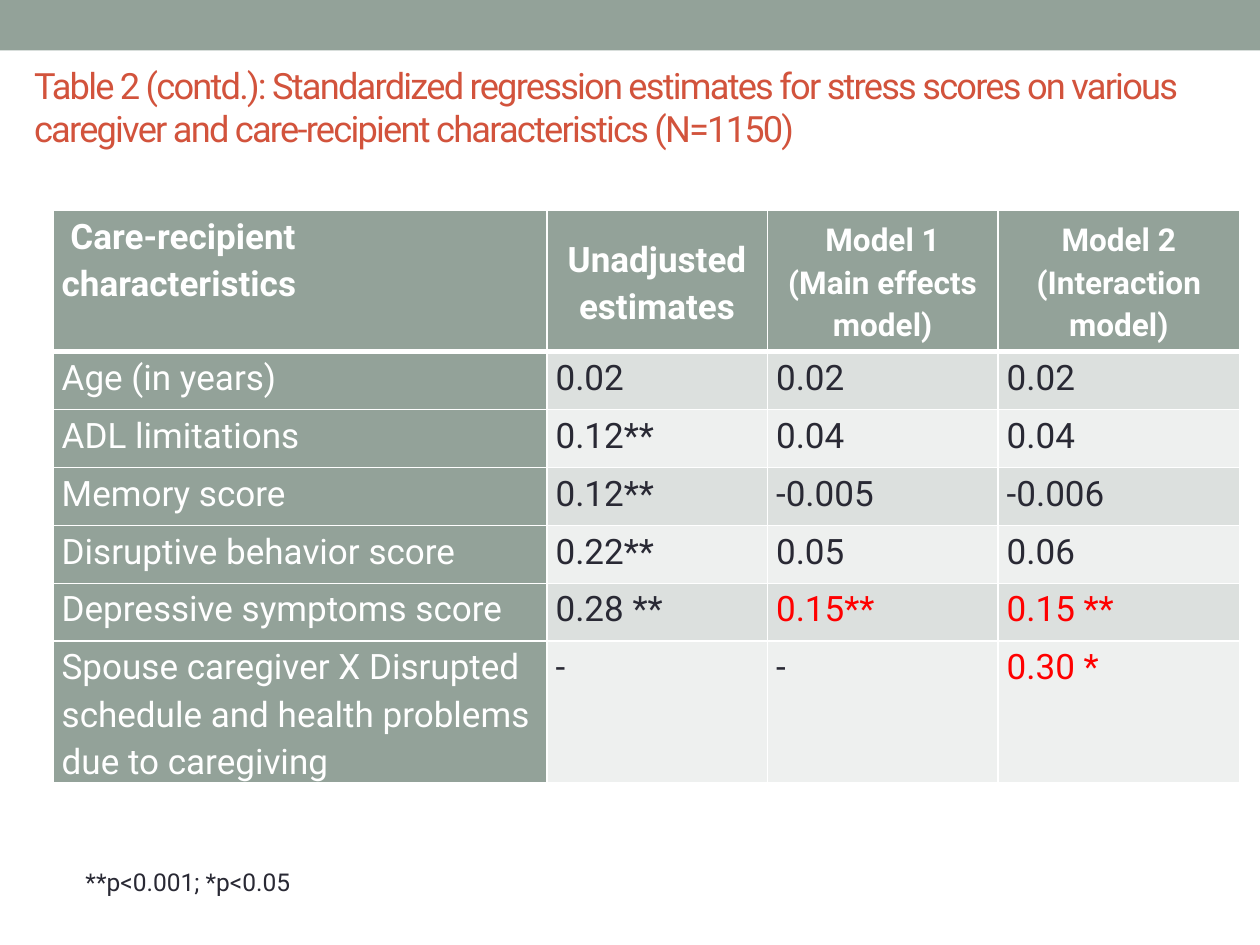
import pptx
import pptx.dml.color
import pptx.enum.shapes
import pptx.enum.text
import pptx.oxml
import pptx.oxml.ns
import pptx.util
from pptx.util import Inches

RGBColor = pptx.dml.color.RGBColor
ALIGN = pptx.enum.text.PP_ALIGN
ANCHOR = pptx.enum.text.MSO_ANCHOR
AUTO_SIZE = pptx.enum.text.MSO_AUTO_SIZE

SAGE = RGBColor(0x93, 0xA2, 0x99)
BAND_DARK = RGBColor(0xDC, 0xE0, 0xDE)
BAND_LIGHT = RGBColor(0xEE, 0xF0, 0xEF)
BRICK = RGBColor(0xD2, 0x53, 0x3C)
INK = RGBColor(0x29, 0x29, 0x34)
RED = RGBColor(0xFF, 0x00, 0x00)
WHITE = RGBColor(0xFF, 0xFF, 0xFF)

TITLE = ("Table 2 (contd.): Standardized regression estimates for stress scores "
         "on various caregiver and care-recipient characteristics (N=1150)")
HEADERS = [" Care-recipient characteristics", "Unadjusted estimates",
           "Model 1\n(Main effects model)", "Model 2\n(Interaction model)"]
ESTIMATES = [
    ["Age (in years)", "0.02", "0.02", "0.02"],
    ["ADL limitations", "0.12**", "0.04", "0.04"],
    ["Memory score", "0.12**", "-0.005", "-0.006"],
    ["Disruptive behavior score", "0.22**", "0.05", "0.06"],
    ["Depressive symptoms score", "0.28 **", "0.15**", "0.15 **"],
    ["Spouse caregiver X Disrupted schedule and health problems due to caregiving",
     "-", "-", "0.30 *"],
]
COLUMN_WIDTHS = [3.92, 1.75, 1.83, 1.92]
ROW_HEIGHTS = [1.12] + [0.46] * 5 + [1.12]


def write_text(frame, text, size=20, color=INK, bold=False, align=ALIGN.LEFT,
               line_spacing=None, tracking=None):
    frame.text = text
    for paragraph in frame.paragraphs:
        paragraph.alignment = align
        if line_spacing:
            paragraph.line_spacing = line_spacing
        for run in paragraph.runs:
            run.font.name = "Roboto"
            run.font.size = pptx.util.Pt(size)
            run.font.bold = bold
            run.font.color.rgb = color
            if tracking:
                run.font._element.set("spc", str(tracking))


def set_borders(cell, **widths):
    properties = cell._tc.get_or_add_tcPr()
    for position, side in enumerate(("L", "R", "T", "B")):
        width = pptx.util.Pt(widths.get(side, 1))
        border = pptx.oxml.parse_xml(
            f'<a:ln{side} {pptx.oxml.ns.nsdecls("a")} w="{width}">'
            f'<a:solidFill><a:srgbClr val="{WHITE}"/></a:solidFill></a:ln{side}>')
        properties.insert(position, border)


def fill_cell(cell, text, fill, anchor=ANCHOR.TOP, borders=None, **text_format):
    cell.margin_left = cell.margin_right = Inches(0.07)
    cell.margin_top = cell.margin_bottom = 0
    cell.vertical_anchor = anchor
    cell.fill.solid()
    cell.fill.fore_color.rgb = fill
    write_text(cell.text_frame, text, line_spacing=1.15, **text_format)
    set_borders(cell, **(borders or {}))


def add_top_bar(slide):
    bar = slide.shapes.add_shape(pptx.enum.shapes.MSO_SHAPE.RECTANGLE,
                                 0, 0, Inches(10), Inches(0.4))
    bar.shadow.inherit = False
    bar.fill.solid()
    bar.fill.fore_color.rgb = SAGE
    bar.line.fill.background()


def add_title(slide):
    title = slide.shapes.title
    title.left, title.top = Inches(0.17), Inches(0.5)
    title.width, title.height = Inches(9.33), Inches(0.92)
    frame = title.text_frame
    frame.auto_size = AUTO_SIZE.NONE
    frame.vertical_anchor = ANCHOR.TOP
    frame.margin_top = 0
    write_text(frame, TITLE, size=20.7, color=BRICK, tracking=-100)


def add_estimates_table(slide):
    table = slide.shapes.add_table(
        len(ROW_HEIGHTS), len(COLUMN_WIDTHS), Inches(0.42), Inches(1.67),
        Inches(sum(COLUMN_WIDTHS)), Inches(sum(ROW_HEIGHTS))).table
    for column, width in zip(table.columns, COLUMN_WIDTHS):
        column.width = Inches(width)
    for row, height in zip(table.rows, ROW_HEIGHTS):
        row.height = Inches(height)

    for column, header in enumerate(HEADERS):
        fill_cell(table.cell(0, column), header, SAGE,
                  anchor=ANCHOR.MIDDLE if column else ANCHOR.TOP,
                  borders={"B": 3}, size=18 if column > 1 else 20,
                  color=WHITE, bold=True,
                  align=ALIGN.CENTER if column else ALIGN.LEFT)

    for row, (characteristic, *values) in enumerate(ESTIMATES, start=1):
        borders = {"T": 3} if row == 1 else {}
        fill_cell(table.cell(row, 0), characteristic, SAGE,
                  borders=borders, color=WHITE)
        band = BAND_DARK if row % 2 else BAND_LIGHT
        for column, value in enumerate(values, start=1):
            highlighted = column > 1 and "*" in value
            fill_cell(table.cell(row, column), value, band, borders=borders,
                      color=RED if highlighted else INK)


def add_significance_note(slide):
    note = slide.shapes.add_textbox(Inches(0.58), Inches(6.83),
                                    Inches(2.02), Inches(0.34))
    frame = note.text_frame
    frame.word_wrap = False
    frame.auto_size = AUTO_SIZE.SHAPE_TO_FIT_TEXT
    frame.vertical_anchor = ANCHOR.MIDDLE
    write_text(frame, "**p<0.001; *p<0.05", size=14)


def main():
    presentation = pptx.Presentation()
    presentation.slide_width = Inches(10)
    presentation.slide_height = Inches(7.5)
    slide = presentation.slides.add_slide(presentation.slide_layouts[5])
    add_top_bar(slide)
    add_title(slide)
    add_estimates_table(slide)
    add_significance_note(slide)
    presentation.save("out.pptx")


if __name__ == "__main__":
    main()
